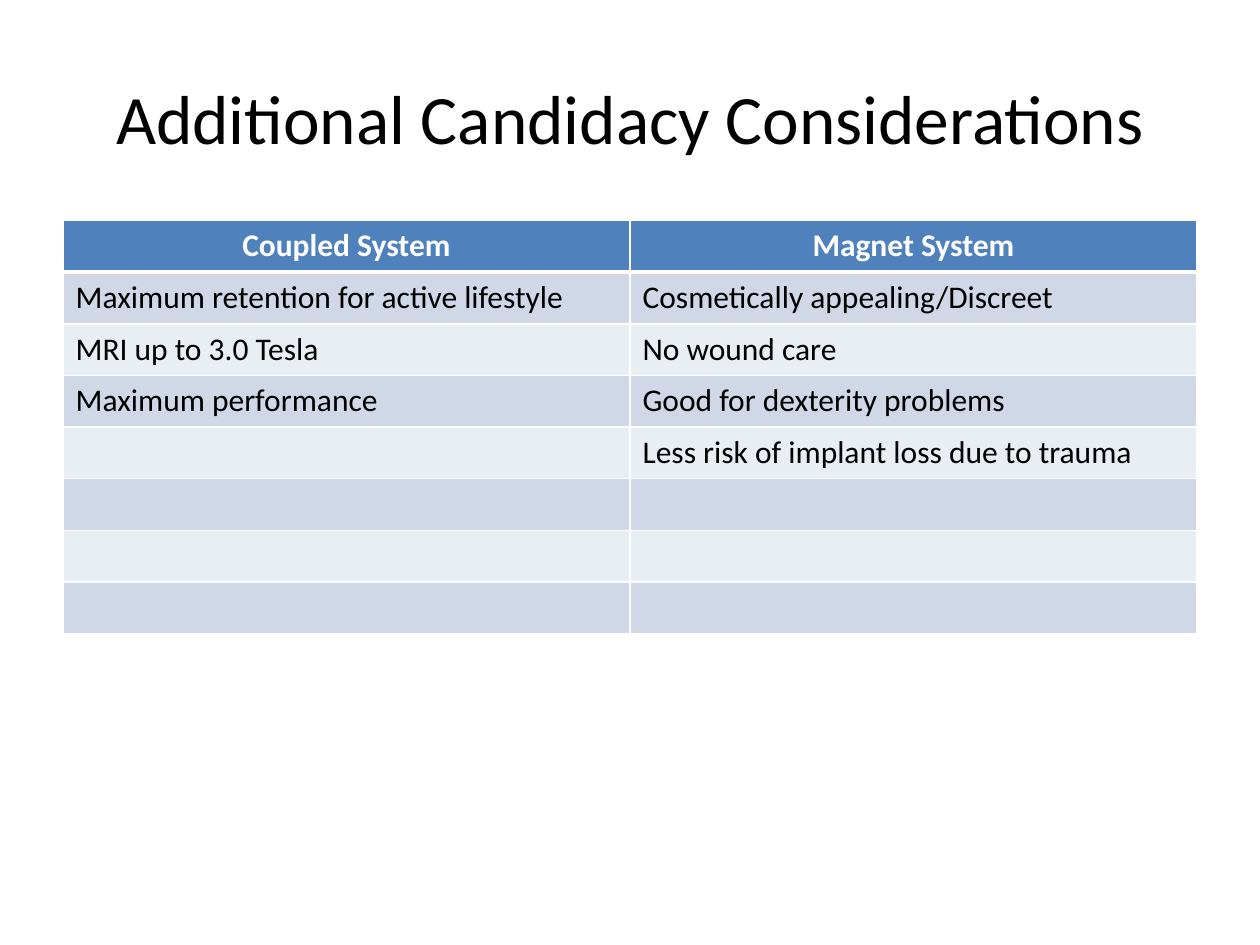
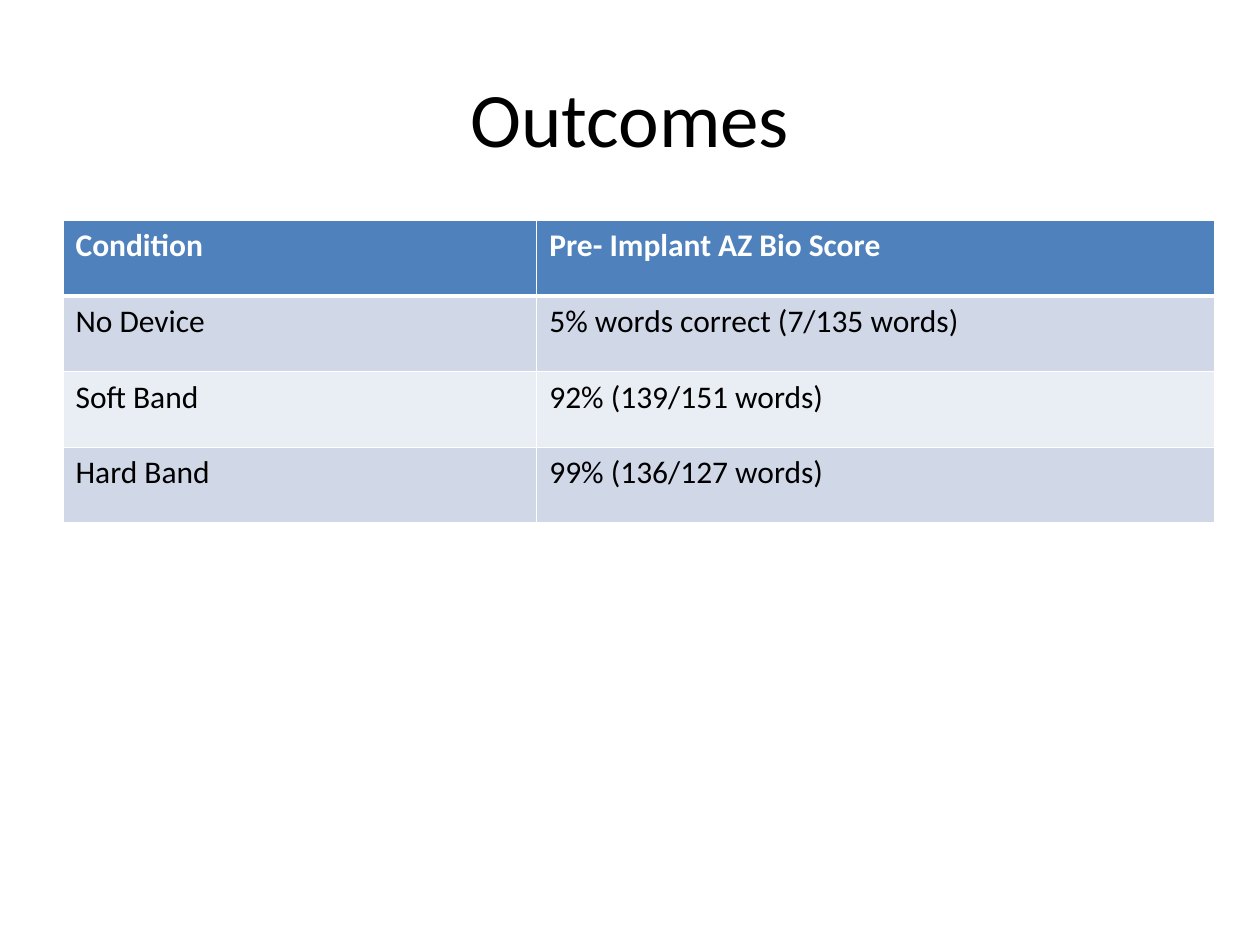
from lxml import etree
from pptx import Presentation
from pptx.dml.color import RGBColor
from pptx.enum import text
from pptx.oxml.ns import qn
from pptx.util import Inches, Pt

BLACK = RGBColor(0x00, 0x00, 0x00)
WHITE = RGBColor(0xFF, 0xFF, 0xFF)
BLUE = RGBColor(0x4F, 0x81, 0xBD)
BANDS = RGBColor(0xD0, 0xD8, 0xE8), RGBColor(0xE9, 0xED, 0xF4)
FONT = "Calibri"
LEFT = Inches(0.5)
CENTER = text.PP_ALIGN.CENTER


class Deck:
    """Holds the shared style and the slide being filled."""

    def __init__(self):
        self.prs = Presentation()
        self.prs.slide_width = Inches(10)
        self.prs.slide_height = Inches(7.5)
        self.slide = None

    def add(self, title, size):
        self.slide = self.prs.slides.add_slide(self.prs.slide_layouts[6])
        box = self.slide.shapes.add_textbox(LEFT, Inches(0.3), Inches(9), Inches(1.25))
        frame = box.text_frame
        frame.word_wrap = True
        frame.vertical_anchor = text.MSO_ANCHOR.MIDDLE
        frame.text = title
        self.style(frame.paragraphs[0], size, BLACK, align=CENTER)

    def style(self, para, size, color, bold=False, align=None):
        para.alignment = align
        for run in para.runs:
            font = run.font
            font.name, font.size, font.bold = FONT, Pt(size), bold
            font.color.rgb = color

    def border(self, cell, side, width):
        line = etree.SubElement(cell._tc.get_or_add_tcPr(), qn(f"a:ln{side}"), w=str(Pt(width)))
        fill = etree.SubElement(line, qn("a:solidFill"))
        etree.SubElement(fill, qn("a:srgbClr"), val=str(WHITE))

    def table(self, rows, widths, height, align=None):
        """Draw rows of text, the first as header, with widths and row height in inches."""
        frame = self.slide.shapes.add_table(
            len(rows), len(widths), LEFT, Inches(1.75),
            Inches(sum(widths)), Inches(height * len(rows)))
        grid = frame.table
        for col, width in zip(grid.columns, widths):
            col.width = Inches(width)
        for r, row in enumerate(rows):
            grid.rows[r].height = Inches(height)
            head = r == 0
            for c, words in enumerate(row):
                cell = grid.cell(r, c)
                for side in "LRTB":
                    thick = (r, side) in ((0, "B"), (1, "T"))
                    self.border(cell, side, 3 if thick else 1)
                cell.fill.solid()
                cell.fill.fore_color.rgb = BLUE if head else BANDS[(r - 1) % 2]
                cell.text_frame.text = words
                self.style(cell.text_frame.paragraphs[0], 18, WHITE if head else BLACK,
                           head, align if head else None)


def main():
    deck = Deck()

    deck.add("Additional Candidacy Considerations", 39.6)
    factors = [
        ("Coupled System", "Magnet System"),
        ("Maximum retention for active lifestyle", "Cosmetically appealing/Discreet"),
        ("MRI up to 3.0 Tesla", "No wound care"),
        ("Maximum performance", "Good for dexterity problems"),
        ("", "Less risk of implant loss due to trauma"),
    ]
    spare = [("", "")] * 3
    deck.table(factors + spare, (4.5, 4.5), 0.41, CENTER)

    deck.add("Outcomes", 44)
    scores = [
        ("Condition", "Pre- Implant AZ Bio Score"),
        ("No Device", "5% words correct (7/135 words)"),
        ("Soft Band", "92% (139/151 words)"),
        ("Hard Band", "99% (136/127 words)"),
    ]
    deck.table(scores, (3.76, 5.38), 0.6)

    deck.prs.save("out.pptx")


if __name__ == "__main__":
    main()
